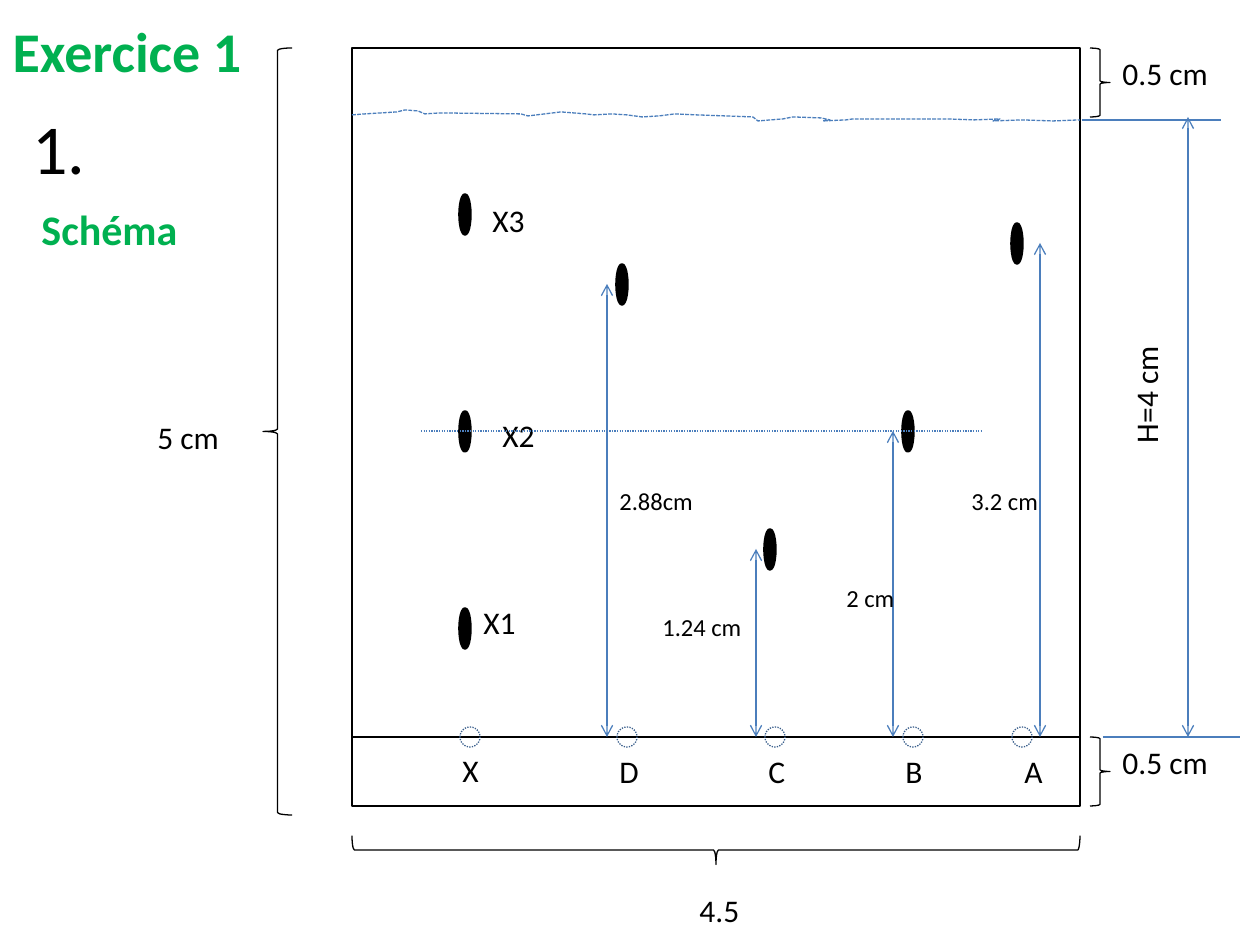
from lxml.etree import SubElement
from pptx import Presentation
from pptx.dml.color import RGBColor
from pptx.enum.dml import MSO_LINE_DASH_STYLE as DASH
from pptx.enum.shapes import MSO_CONNECTOR, MSO_SHAPE
from pptx.enum.text import MSO_ANCHOR, MSO_AUTO_SIZE, PP_ALIGN
from pptx.oxml.ns import qn
from pptx.util import Inches, Pt

PX = Inches(1) / 126
COLORS = {"ink": "000000", "paper": "FFFFFF", "title": "00B050",
          "measure": "4B7EBC", "ring": "3A5F8C"}
FONT = "Calibri"

# Distances inside the tank, from its top left corner
WATER_Y, FLOOR_Y, MIDDLE_Y = 72, 689, 383
BLOB_W, BLOB_H, RING = 10, 39, 20
WAVES = [
    (0, 67), (13, 66), (45, 64), (53, 62), (66, 63), (73, 66), (88, 65),
    (169, 66), (176, 68), (209, 64), (234, 66), (242, 67), (260, 66),
    (275, 67), (290, 69), (307, 68), (323, 66), (345, 67), (401, 69),
    (406, 73), (431, 71), (441, 69), (469, 70), (478, 72), (471, 73),
    (494, 72), (501, 71), (595, 71), (622, 72), (648, 71), (641, 73),
    (670, 72), (701, 73), (728, 72)]
# name, ring x, name x, blob y, arrow x, measure, measure box
COLUMNS = [
    ("D", 265, 255, 217, 255, "2.88cm", (255, 432, 100, 43)),
    ("C", 413, 404, 482, 404, "1.24 cm", (298, 558, 105, 43)),
    ("B", 551, 541, 364, 541, "2 cm", (482, 529, 73, 43)),
    ("A", 660, 660, 176, 688, "3.2 cm", (607, 432, 92, 43))]
# name, blob y, name x, name y
X_BLOBS = [("X1", 561, 119, 549), ("X2", 364, 138, 362),
           ("X3", 147, 128, 147)]
X_COLUMN = 108


def px(n):
    return round(n * PX)


def rgb(name):
    return RGBColor.from_string(COLORS[name])


def style_line(line, color, width, dash=None):
    line.color.rgb = rgb(color)
    line.width = Pt(width)
    if dash:
        line.dash_style = dash


def add_outline(slide, kind, box, color="ink", width=0.75, dash=None,
                fill=None):
    s = slide.shapes.add_shape(kind, *map(px, box))
    s.shadow.inherit = False
    if fill:
        s.fill.solid()
        s.fill.fore_color.rgb = rgb(fill)
    else:
        s.fill.background()
    style_line(s.line, color, width, dash)
    return s


def add_line(slide, start, end, color="measure", dash=None, arrows=False):
    c = slide.shapes.add_connector(MSO_CONNECTOR.STRAIGHT,
                                   *map(px, (*start, *end)))
    style_line(c.line, color, 0.75, dash)
    if arrows:
        ln = c.line._get_or_add_ln()
        for tag in ("a:headEnd", "a:tailEnd"):
            SubElement(ln, qn(tag), type="arrow")
    SubElement(c._element.spPr, qn("a:effectLst"))


def format_text(tf, text, size, color="ink", bold=False):
    tf.text = text
    p = tf.paragraphs[0]
    p.alignment = PP_ALIGN.LEFT
    p.font.name, p.font.size, p.font.bold = FONT, Pt(size), bold
    p.font.color.rgb = rgb(color)


def add_label(slide, text, box, size=18, color="ink", bold=False, wrap=False):
    """Add a text box that grows with its text unless it wraps."""
    tb = slide.shapes.add_textbox(*map(px, box))
    tf = tb.text_frame
    tf.word_wrap = wrap
    tf.auto_size = (MSO_AUTO_SIZE.NONE if wrap
                    else MSO_AUTO_SIZE.SHAPE_TO_FIT_TEXT)
    format_text(tf, text, size, color, bold)
    return tb


def add_headings(slide, box):
    x, y, w, h = box
    title = slide.shapes.title
    title.left, title.top, title.width, title.height = map(px, box)
    tf = title.text_frame
    tf.auto_size, tf.vertical_anchor = MSO_AUTO_SIZE.NONE, MSO_ANCHOR.TOP
    format_text(tf, "Exercice 1", 32, "title", True)
    add_label(slide, "1.", (x + 20, y + 88, 79, 97), 40)
    add_label(slide, "Schéma", (x + 29, y + 187, 207, h), 24, "title", True,
              wrap=True)


def add_tank(slide, box):
    x, y, w, h = box
    add_outline(slide, MSO_SHAPE.RECTANGLE, box, width=1.5, fill="paper")
    add_line(slide, (x, y + FLOOR_Y), (x + w, y + FLOOR_Y), "ink")
    points = [(px(x + dx), px(y + dy)) for dx, dy in WAVES]
    builder = slide.shapes.build_freeform(*points[0])
    builder.add_line_segments(points[1:], close=False)
    water = builder.convert_to_shape()
    water.shadow.inherit = False
    water.fill.background()
    style_line(water.line, "measure", 0.75, DASH.SQUARE_DOT)


def add_blob(slide, x, y):
    add_outline(slide, MSO_SHAPE.OVAL, (x, y, BLOB_W, BLOB_H), width=2,
                fill="ink")


def add_ring(slide, x, floor):
    add_outline(slide, MSO_SHAPE.OVAL, (x, floor - RING // 2, RING, RING),
                "ring", dash=DASH.ROUND_DOT)


def add_columns(slide, box):
    """Draw the floor rings, the blobs above them and their heights."""
    x, y, w, h = box
    floor = y + FLOOR_Y
    for name, ring_x, name_x, blob_y, arrow_x, size, size_box in COLUMNS:
        add_ring(slide, x + ring_x, floor)
        add_label(slide, name, (x + name_x, floor + 9, 44, 50))
        add_blob(slide, x + ring_x, y + blob_y)
        add_line(slide, (x + arrow_x, y + blob_y + BLOB_H // 2),
                 (x + arrow_x, floor), arrows=True)
        size_x, size_y, size_w, size_h = size_box
        add_label(slide, size, (x + size_x, y + size_y, size_w, size_h), 14)
    add_ring(slide, x + X_COLUMN, floor)
    add_label(slide, "X", (x + X_COLUMN - 10, floor + 8, 43, 50))
    for name, blob_y, name_x, name_y in X_BLOBS:
        add_blob(slide, x + X_COLUMN, y + blob_y)
        add_label(slide, name, (x + name_x, y + name_y, 58, 50))
    add_line(slide, (x + 69, y + MIDDLE_Y), (x + 630, y + MIDDLE_Y),
             dash=DASH.ROUND_DOT)


def add_dimensions(slide, box):
    """Draw the braces and measures around the tank."""
    x, y, w, h = box
    right = x + w
    for top in (y, y + FLOOR_Y):
        add_outline(slide, MSO_SHAPE.RIGHT_BRACE, (right + 10, top, 20, 69))
        add_label(slide, "0.5 cm", (right + 30, top, 112, 50))

    add_outline(slide, MSO_SHAPE.LEFT_BRACE, (x - 89, y, 29, 767))
    add_label(slide, "5 cm", (x - 207, y + 364, 88, 50))

    depth, center_y = 29, y + h + 44
    brace = add_outline(slide, MSO_SHAPE.RIGHT_BRACE,
                        (x + (w - depth) / 2, center_y - w / 2, depth, w))
    brace.rotation = 90
    add_label(slide, "4.5", (x + 335, y + h + 79, 65, 50))

    add_line(slide, (right + 2, y + WATER_Y), (right + 141, y + WATER_Y))
    add_line(slide, (right + 23, y + FLOOR_Y), (right + 160, y + FLOOR_Y))
    add_line(slide, (right + 108, y + WATER_Y - 3),
             (right + 108, y + FLOOR_Y), arrows=True)
    add_label(slide, "H=4 cm", (right + 4, y + 321, 123, 50)).rotation = 270


def main():
    prs = Presentation()
    prs.slide_width, prs.slide_height = Inches(10), Inches(7.5)
    slide = prs.slides.add_slide(prs.slide_layouts[5])
    tank = (352, 48, 728, 758)
    add_tank(slide, tank)
    add_dimensions(slide, tank)
    add_columns(slide, tank)
    add_headings(slide, (0, 10, 266, 105))
    prs.save("out.pptx")


if __name__ == "__main__":
    main()
